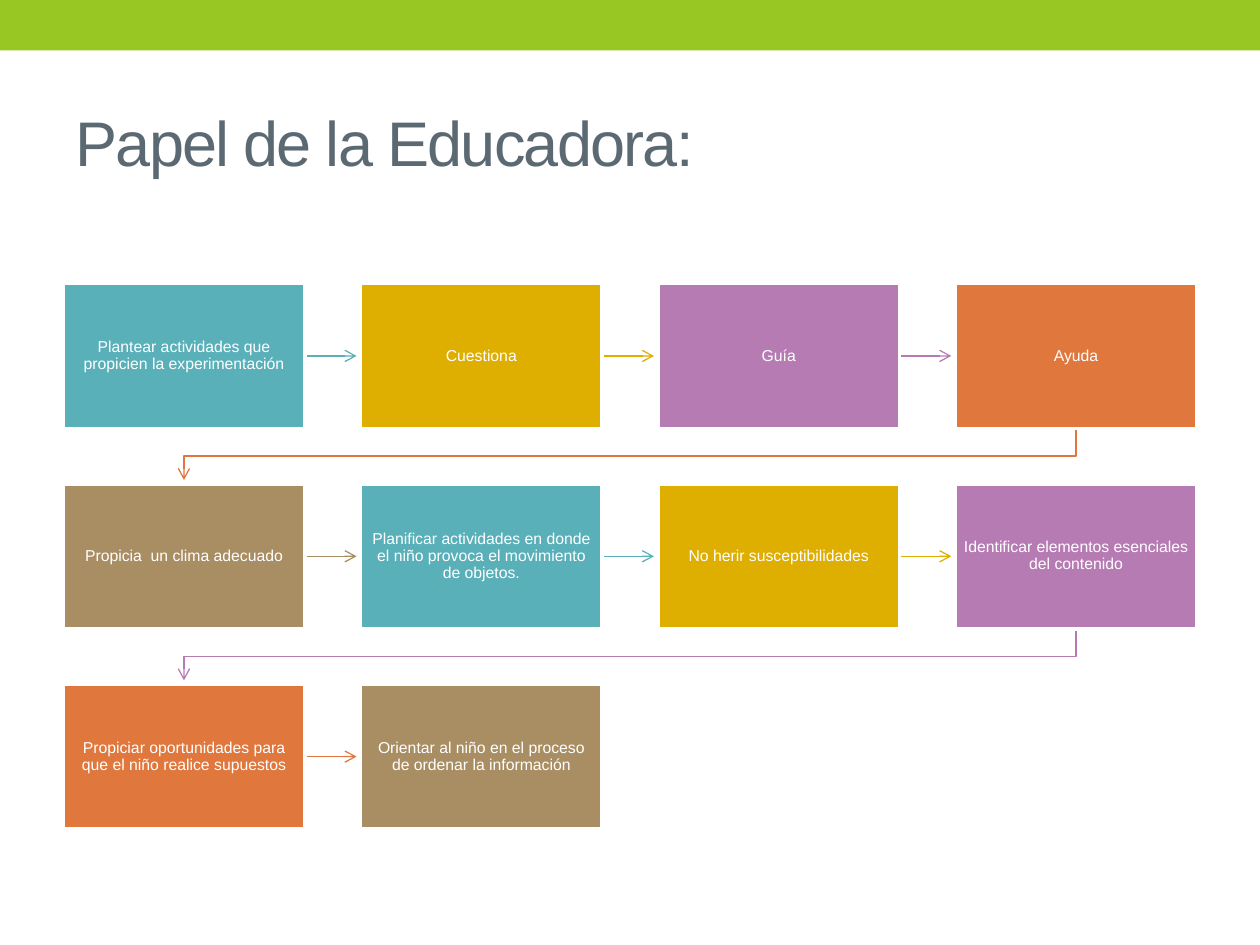
import pptx
import pptx.util
from lxml import etree
from pptx.dml.color import RGBColor
from pptx.enum.shapes import MSO_CONNECTOR, MSO_SHAPE
from pptx.enum.text import MSO_ANCHOR, PP_ALIGN
from pptx.oxml.ns import qn
from pptx.util import Inches, Pt

COLORS = {
    "band": "98C723",
    "title": "5B6973",
    "white": "FFFFFF",
    "teal": "59B0B9",
    "gold": "DEAE00",
    "purple": "B77BB4",
    "orange": "E0773C",
    "brown": "A98D63",
}
STEP_COLORS = ["teal", "gold", "purple", "orange", "brown"]
STEPS = [
    "Plantear actividades que propicien la experimentación",
    "Cuestiona",
    "Guía",
    "Ayuda",
    "Propicia  un clima adecuado",
    "Planificar actividades en donde el niño provoca el movimiento de objetos.",
    "No herir susceptibilidades",
    "Identificar elementos esenciales del contenido",
    "Propiciar oportunidades para que el niño realice supuestos",
    "Orientar al niño en el proceso de ordenar la información",
]
COLUMNS = 4
STEP_WIDTH, STEP_HEIGHT = Inches(1.92), Inches(1.15)
ROW_PITCH = Inches(1.59)
ARROW_GAP = Inches(0.03)


def rgb(name):
    return RGBColor.from_string(COLORS[name])


def style_font(font, size, color):
    font.name = "Arial"
    font.size = Pt(size)
    font.color.rgb = rgb(color)


def add_block(slide, left, top, width, height, color):
    block = slide.shapes.add_shape(MSO_SHAPE.RECTANGLE, left, top, width, height)
    block.shadow.inherit = False
    block.fill.solid()
    block.fill.fore_color.rgb = rgb(color)
    block.line.fill.background()
    return block


def add_title(slide, left, top, width, height):
    title = slide.shapes.title
    title.left, title.top, title.width, title.height = left, top, width, height
    frame = title.text_frame
    frame.text = "Papel de la Educadora:"
    frame.vertical_anchor = MSO_ANCHOR.MIDDLE
    heading = frame.paragraphs[0]
    heading.alignment = PP_ALIGN.LEFT
    style_font(heading.font, 36, "title")
    heading.runs[0]._r.get_or_add_rPr().set("spc", "-100")


def add_step(slide, left, top, text, color):
    step = add_block(slide, left, top, STEP_WIDTH, STEP_HEIGHT, color)
    step.line.color.rgb = rgb("white")
    step.line.width = Pt(2.08)
    frame = step.text_frame
    frame.word_wrap = True
    frame.vertical_anchor = MSO_ANCHOR.MIDDLE
    frame.margin_left = frame.margin_right = Inches(0.07)
    frame.margin_top = frame.margin_bottom = Inches(0.07)
    frame.text = text
    label = frame.paragraphs[0]
    label.alignment = PP_ALIGN.CENTER
    label.line_spacing = 0.9
    style_font(label.font, 9, color="white")


def style_arrow(arrow, color):
    arrow.line.color.rgb = rgb(color)
    arrow.line.width = Pt(0.75)
    etree.SubElement(arrow.line._get_or_add_ln(), qn("a:tailEnd"), type="arrow")


def add_next_arrow(slide, start_x, end_x, y, color):
    arrow = slide.shapes.add_connector(MSO_CONNECTOR.STRAIGHT, start_x, y, end_x, y)
    style_arrow(arrow, color)
    etree.SubElement(arrow._element.spPr, qn("a:effectLst"))


def add_return_arrow(slide, start_x, end_x, start_y, end_y, color):
    """Leads from the end of one row to the start of the next."""
    turn_y = start_y + Inches(0.22)
    outline = slide.shapes.build_freeform(start_x, start_y)
    outline.add_line_segments(
        [(start_x, turn_y), (end_x, turn_y), (end_x, end_y)], close=False
    )
    arrow = outline.convert_to_shape()
    arrow.shadow.inherit = False
    arrow.fill.background()
    style_arrow(arrow, color)


def add_process(slide, left, top, width):
    """Steps run left to right in rows, each with an arrow to the next."""
    column_pitch = (width - STEP_WIDTH) // (COLUMNS - 1)
    for index, text in enumerate(STEPS):
        row, column = divmod(index, COLUMNS)
        x, y = left + column * column_pitch, top + row * ROW_PITCH
        color = STEP_COLORS[index % len(STEP_COLORS)]
        if index < len(STEPS) - 1:
            if column < COLUMNS - 1:
                add_next_arrow(slide, x + STEP_WIDTH, x + column_pitch - ARROW_GAP,
                               y + STEP_HEIGHT // 2, color)
            else:
                add_return_arrow(slide, x + STEP_WIDTH // 2, left + STEP_WIDTH // 2,
                                 y + STEP_HEIGHT, y + ROW_PITCH - ARROW_GAP, color)
        add_step(slide, x, y, text, color)


def main():
    deck = pptx.Presentation()
    deck.slide_width, deck.slide_height = Inches(10), Inches(7.5)
    slide = deck.slides.add_slide(deck.slide_layouts[5])
    add_block(slide, 0, 0, deck.slide_width, Inches(0.4), "band")
    add_title(slide, Inches(0.5), Inches(0.58), Inches(9), Inches(1.08))
    add_process(slide, Inches(0.5), Inches(2.25), Inches(9))
    deck.save("out.pptx")


if __name__ == "__main__":
    main()
